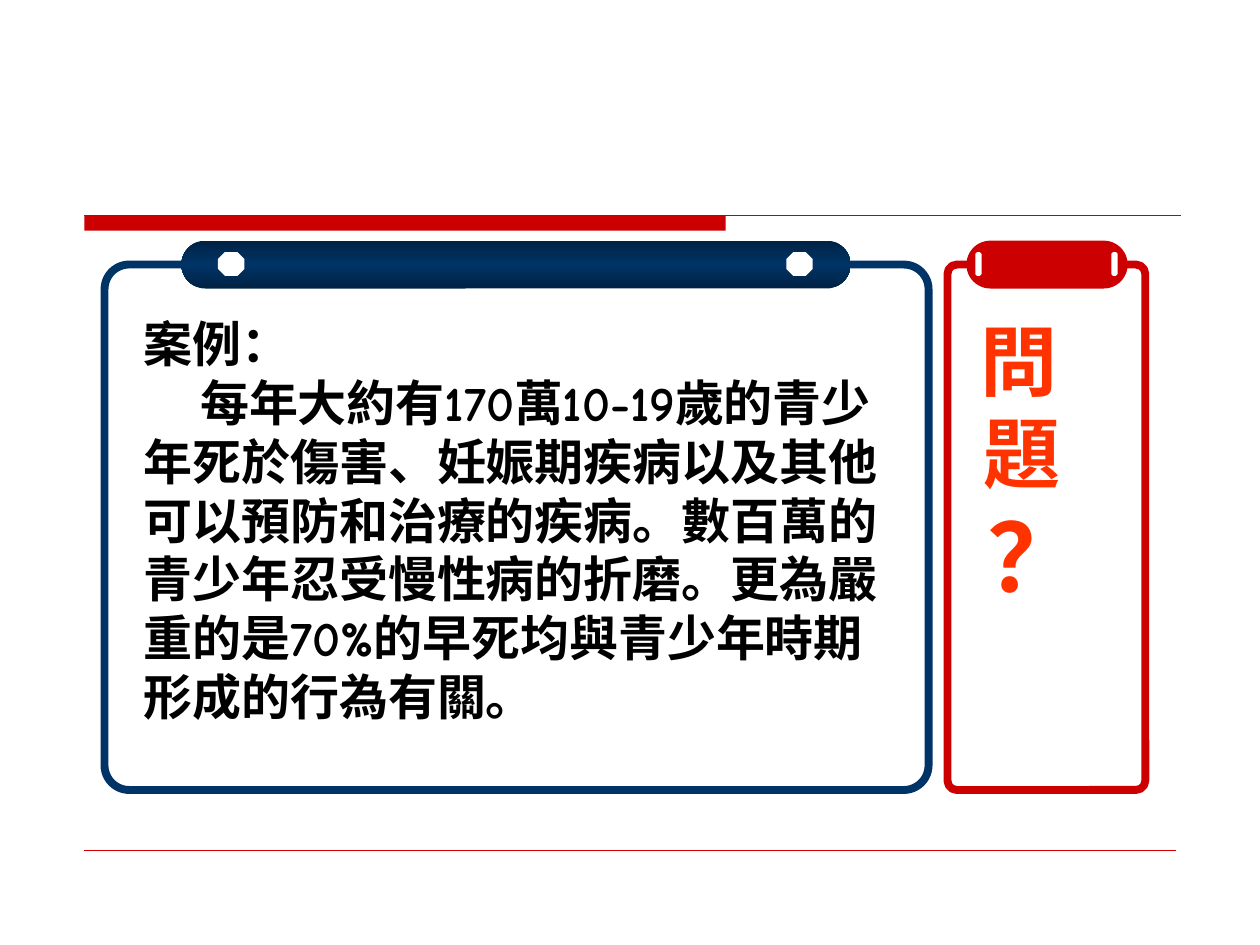
from pptx import Presentation
from pptx import util as u
from pptx.dml.color import RGBColor
from pptx.enum import shapes, text
from pptx.oxml.ns import qn
from lxml import etree

RED, NAVY, DARK = "CC0000", "003366", "002244"
FONT = "Comic Neue"
SHAPE = shapes.MSO_SHAPE


def color(code):
    return RGBColor.from_string(code)


def add_shape(home, kind, box, fill=None, line=None, adj=None):
    shape = home.shapes.add_shape(kind, *map(u.Inches, box))
    shape.shadow.inherit = False
    if fill:
        shape.fill.solid()
        shape.fill.fore_color.rgb = color(fill)
    else:
        shape.fill.background()
    if line:
        shape.line.color.rgb = color(line)
        shape.line.width = u.Pt(4.5)
    else:
        shape.line.fill.background()
    if adj is not None:
        shape.adjustments[0] = adj
    return shape


def add_rule(slide, left, right, top, width):
    rule = slide.shapes.add_connector(
        shapes.MSO_CONNECTOR.STRAIGHT,
        u.Inches(left), u.Inches(top), u.Inches(right), u.Inches(top))
    rule.line.color.rgb = color(RED)
    rule.line.width = u.Pt(width)
    etree.SubElement(rule.element.spPr, qn("a:effectLst"))


def shade(shape):
    """Fill from dark edges to a lighter middle, top to bottom."""
    shape.fill.gradient()
    shape.fill.gradient_angle = 270
    stops = shape.fill._fill._gradFill.find(qn("a:gsLst"))
    for stop in list(stops):
        stops.remove(stop)
    for pos, code in ((0, DARK), (50, NAVY), (100, DARK)):
        stop = etree.SubElement(stops, qn("a:gs"), pos=str(pos * 1000))
        etree.SubElement(stop, qn("a:srgbClr"), val=code)


def add_board(slide, left, width, clip, holes, hole, hue):
    """Draw a grouped frame with a clip bar and two holes."""
    board = slide.shapes.add_group_shape()
    add_shape(board, SHAPE.ROUNDED_RECTANGLE, (left, 2.1, width, 4.17),
              line=hue, adj=0.047)
    bar = add_shape(board, SHAPE.ROUNDED_RECTANGLE,
                    (clip[0], 1.91, clip[1], 0.38), fill=hue, adj=0.5)
    for x in holes:
        add_shape(board, SHAPE.OCTAGON, (x, 2, hole, 0.19), fill="FFFFFF")
    return board, bar


def add_text(home, box, lines, hue):
    """Write lines, each given as (indent in inches, [(words, size)])."""
    frame = home.shapes.add_textbox(*map(u.Inches, box)).text_frame
    frame.word_wrap = True
    frame.auto_size = text.MSO_AUTO_SIZE.SHAPE_TO_FIT_TEXT
    for i, (indent, runs) in enumerate(lines):
        para = frame.paragraphs[0] if i == 0 else frame.add_paragraph()
        if indent:
            para._p.get_or_add_pPr().set("indent", str(u.Inches(indent)))
        for words, size in runs:
            run = para.add_run()
            run.text = words
            run.font.name = FONT
            run.font.size = u.Pt(size)
            run.font.bold = True
            run.font.color.rgb = color(hue)


def main():
    deck = Presentation()
    deck.slide_width, deck.slide_height = u.Inches(10), u.Inches(7.5)
    slide = deck.slides.add_slide(deck.slide_layouts[6])

    add_shape(slide, SHAPE.RECTANGLE, (0.67, 1.71, 5.09, 0.12), fill=RED)
    add_rule(slide, 0.67, 9.37, 1.71, 0.75)
    add_rule(slide, 0.67, 9.33, 6.75, 0.25)

    case, bar = add_board(slide, 0.83, 6.54, (1.44, 5.31),
                          (1.73, 6.24), 0.21, NAVY)
    shade(bar)
    story = ("每年大約有170萬10-19歲的青少年死於傷害、妊娠期疾病以及其他可以預防和治療的疾病。"
             "數百萬的青少年忍受慢性病的折磨。更為嚴重的是70%的早死均與青少年時期形成的行為有關。")
    add_text(case, (1.04, 2.44, 6.08, 3.37),
             [(0, [("案例：", 28)]), (0.45, [(story, 28)])], "000000")

    ask, _ = add_board(slide, 7.52, 1.57, (7.67, 1.28),
                       (7.74, 8.82), 0.05, RED)
    add_text(ask, (7.57, 2.44, 1.46, 2.9),
             [(0, [(" ", 36), ("問", 44)]),
              (0, [(" 題", 44)]),
              (0, [(" ？", 54)])], "FF3300")

    deck.save("out.pptx")


if __name__ == "__main__":
    main()
